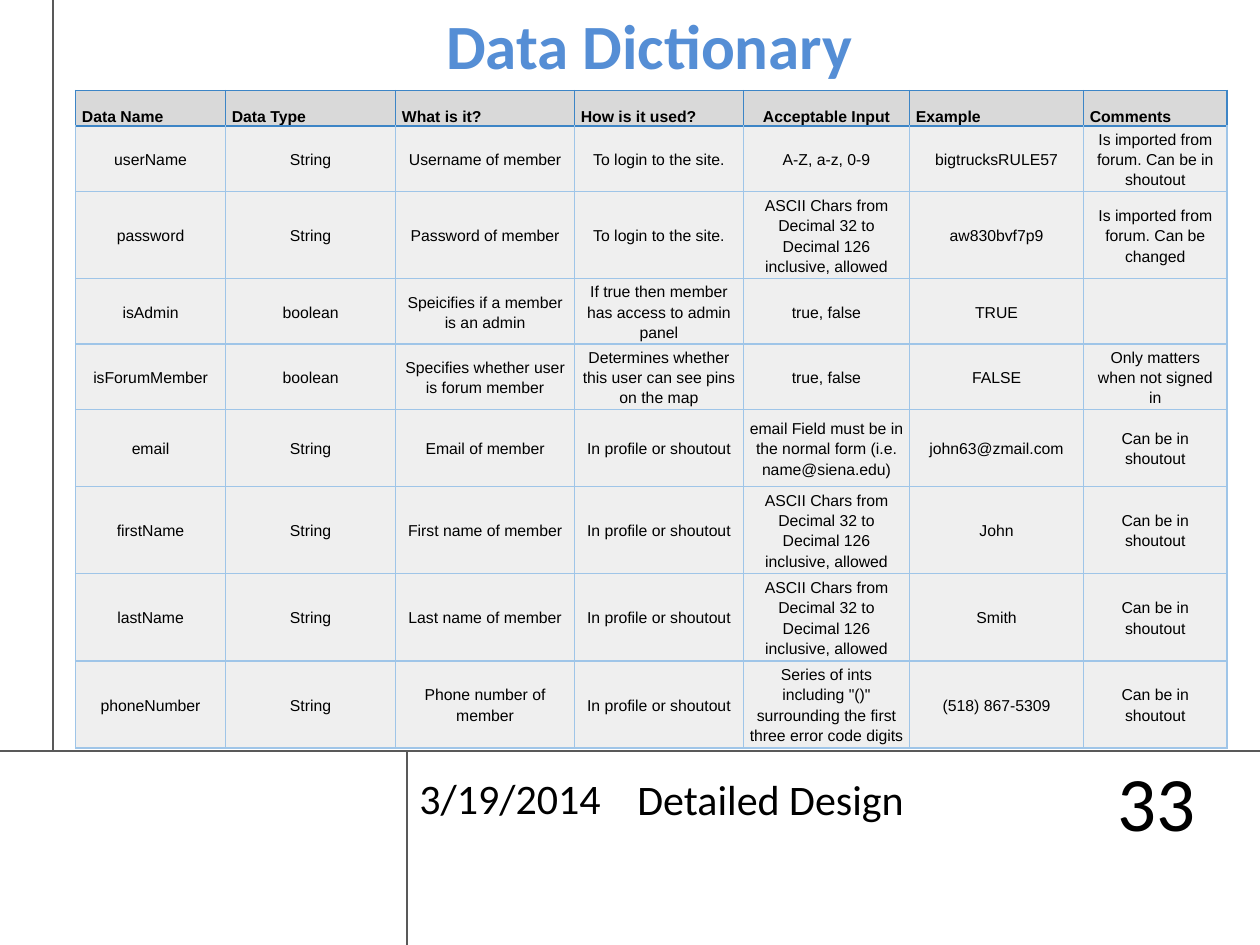
from lxml.etree import SubElement
from pptx import Presentation
from pptx.dml.color import RGBColor
from pptx.enum.shapes import MSO_CONNECTOR as LINE
from pptx.enum.text import MSO_ANCHOR as ANCHOR, PP_ALIGN as ALIGN
from pptx.oxml import parse_xml
from pptx.oxml.ns import nsdecls, qn
from pptx.util import Inches, Pt

HEAD = ["Data Name", "Data Type", "What is it?", "How is it used?",
        "Acceptable Input", "Example", "Comments"]
ASCII = "ASCII Chars from Decimal 32 to Decimal 126 inclusive, allowed"
LOGIN = "To login to the site."
PROFILE = "In profile or shoutout"
SHOUT = "Can be in shoutout"
BODY = [
    ["userName", "String", "Username of member", LOGIN, "A-Z, a-z, 0-9",
     "bigtrucksRULE57", "Is imported from forum. Can be in shoutout"],
    ["password", "String", "Password of member", LOGIN, ASCII,
     "aw830bvf7p9", "Is imported from forum. Can be changed"],
    ["isAdmin", "boolean", "Speicifies if a member is an admin",
     "If true then member has access to admin panel", "true, false", "TRUE", ""],
    ["isForumMember", "boolean", "Specifies whether user is forum member",
     "Determines whether this user can see pins on the map", "true, false",
     "FALSE", "Only matters when not signed in"],
    ["email", "String", "Email of member", PROFILE,
     "email Field must be in the normal form (i.e. name@siena.edu)",
     "john63@zmail.com", SHOUT],
    ["firstName", "String", "First name of member", PROFILE, ASCII, "John", SHOUT],
    ["lastName", "String", "Last name of member", PROFILE, ASCII, "Smith", SHOUT],
    ["phoneNumber", "String", "Phone number of member", PROFILE,
     'Series of ints including "()" surrounding the first three error code digits',
     "(518) 867-5309", SHOUT],
]
WIDTHS = [1.19, 1.35, 1.42, 1.34, 1.32, 1.38, 1.14]
HEIGHTS = [0.28, 0.52, 0.69, 0.52, 0.52, 0.61, 0.69, 0.69, 0.69]
RULES = [(10, 5.96, 0, 5.96), (0.42, 5.96, 0.42, 0), (3.23, 7.5, 3.23, 5.96)]
DARK, LIGHT = "3D85C6", "9FC5E8"


def color(code):
    return RGBColor.from_string(code)


def add_run(para, text, size, font, code="000000", bold=False):
    run = para.add_run()
    run.text = text
    run.font.size, run.font.name, run.font.bold = Pt(size), font, bold
    run.font.color.rgb = color(code)
    return run


def add_text(slide, box, text, size, align=ALIGN.LEFT, anchor=ANCHOR.TOP, **look):
    frame = slide.shapes.add_textbox(*map(Inches, box)).text_frame
    frame.word_wrap = True
    frame.vertical_anchor = anchor
    para = frame.paragraphs[0]
    para.alignment = align
    return add_run(para, text, size, "Calibri", **look)


def add_rule(slide, ends):
    rule = slide.shapes.add_connector(LINE.STRAIGHT, *map(Inches, ends))
    rule.line.color.rgb = color("595959")
    rule.line.width = Pt(0.75)
    SubElement(rule._element.spPr, qn("a:effectLst"))


def outline(tag, code):
    return parse_xml(f'<a:{tag} {nsdecls("a")} w="{Pt(1)}"><a:solidFill>'
                     f'<a:srgbClr val="{code}"/></a:solidFill></a:{tag}>')


def fill_cell(cell, text, row, col):
    head = row == 0
    side = DARK if head else LIGHT
    top = DARK if row < 2 else LIGHT
    props = cell._tc.get_or_add_tcPr()
    for tag, code in (("lnL", side), ("lnR", side), ("lnT", top), ("lnB", side)):
        props.append(outline(tag, code))
    cell.fill.solid()
    cell.fill.fore_color.rgb = color("D9D9D9" if head else "EFEFEF")
    cell.margin_left = cell.margin_right = Inches(0.05)
    cell.margin_top = cell.margin_bottom = 0
    cell.vertical_anchor = ANCHOR.BOTTOM if head else ANCHOR.MIDDLE
    para = cell.text_frame.paragraphs[0]
    left = head and HEAD[col] != "Acceptable Input"
    para.alignment = ALIGN.LEFT if left else ALIGN.CENTER
    para.line_spacing = 1.15
    if text:
        add_run(para, text, 9, "Arial", bold=head)


def add_grid(slide):
    rows = [HEAD] + BODY
    box = (0.6, 0.72, sum(WIDTHS), sum(HEIGHTS))
    table = slide.shapes.add_table(len(rows), len(HEAD), *map(Inches, box)).table
    table.first_row = table.horz_banding = False
    for column, width in zip(table.columns, WIDTHS):
        column.width = Inches(width)
    for line, height in zip(table.rows, HEIGHTS):
        line.height = Inches(height)
    for row, texts in enumerate(rows):
        for col, text in enumerate(texts):
            fill_cell(table.cell(row, col), text, row, col)


def main():
    deck = Presentation()
    deck.slide_width, deck.slide_height = Inches(10), Inches(7.5)
    slide = deck.slides.add_slide(deck.slide_layouts[6])
    for ends in RULES:
        add_rule(slide, ends)
    add_text(slide, (3.23, 5.96, 1.89, 0.74), "3/19/2014", 24, anchor=ANCHOR.MIDDLE)
    add_text(slide, (4.96, 6.09, 4.51, 0.5), "Detailed Design", 24)
    add_text(slide, (8.38, 5.93, 1.21, 0.85), "33", 44, ALIGN.RIGHT, ANCHOR.MIDDLE)
    title = add_text(slide, (0.42, 0, 9.58, 0.71), "Data Dictionary ", 36,
                     ALIGN.CENTER, code="558ED5", bold=True)
    title._r.get_or_add_rPr().insert(0, outline("ln", "054697"))
    add_grid(slide)
    deck.save("out.pptx")


if __name__ == "__main__":
    main()
